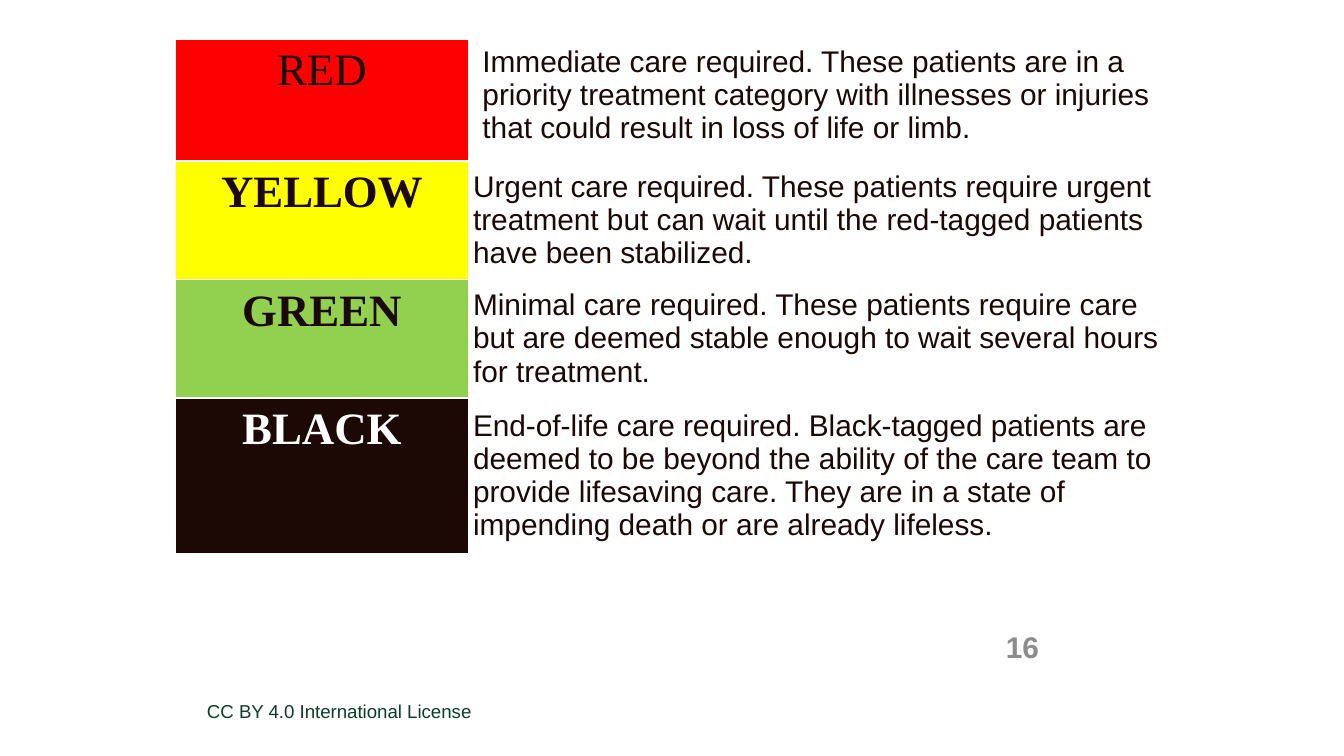
from dataclasses import dataclass

from lxml.etree import SubElement
from pptx import Presentation
from pptx.dml.color import RGBColor
from pptx.enum.text import MSO_ANCHOR, PP_ALIGN
from pptx.oxml.ns import qn
from pptx.util import Inches, Pt

WHITE, INK = "FFFFFF", "1C0804"
SERIF, SANS = "Times New Roman", "Arial"


@dataclass
class Triage:
    label: str
    care: str
    fill: str
    height: float
    color: str = INK


LEVELS = [
    Triage("RED", "Immediate care required. These patients are in a priority treatment "
           "category with illnesses or injuries that could result in loss of life or limb.",
           "FF0000", 0.91),
    Triage("YELLOW", "Urgent care required. These patients require urgent treatment but "
           "can wait until the red-tagged patients have been stabilized.",
           "FFFF00", 0.88),
    Triage("GREEN", "Minimal care required. These patients require care but are deemed "
           "stable enough to wait several hours for treatment.",
           "92D050", 0.88),
    Triage("BLACK", "End-of-life care required. Black-tagged patients are deemed to be "
           "beyond the ability of the care team to provide lifesaving care. They are in a "
           "state of impending death or are already lifeless.",
           INK, 1.16, WHITE),
]


def rgb(color: str) -> RGBColor:
    return RGBColor.from_string(color)


def write(tf, text: str, *, size: float, font: str = SANS, color: str = INK,
          bold: bool = False, align=PP_ALIGN.LEFT) -> None:
    tf.word_wrap = True
    p = tf.paragraphs[0]
    p.alignment = align
    r = p.add_run()
    r.text = text
    r.font.size, r.font.name, r.font.bold = Pt(size), font, bold
    r.font.color.rgb = rgb(color)


def add_text(s, text: str, left: float, top: float, width: float, height: float,
             anchor=MSO_ANCHOR.TOP, **fmt) -> None:
    sp = s.shapes.add_textbox(Inches(left), Inches(top), Inches(width), Inches(height))
    tf = sp.text_frame
    tf.margin_left = tf.margin_right = tf.margin_top = tf.margin_bottom = 0
    tf.vertical_anchor = anchor
    write(tf, text, **fmt)


def style_cell(cell, fill: str) -> None:
    # Borders come before the fill in the cell properties
    pr = cell._tc.get_or_add_tcPr()
    for side in "LRTB":
        ln = SubElement(pr, qn(f"a:ln{side}"), w=str(Pt(1)))
        SubElement(SubElement(ln, qn("a:solidFill")), qn("a:srgbClr"), val=WHITE)
    cell.fill.solid()
    cell.fill.fore_color.rgb = rgb(fill)


def add_triage_table(s, left: float, top: float, widths: tuple[float, float]) -> None:
    height = sum(level.height for level in LEVELS)
    table = s.shapes.add_table(len(LEVELS), 2, Inches(left), Inches(top),
                               Inches(sum(widths)), Inches(height)).table
    for column, width in zip(table.columns, widths):
        column.width = Inches(width)
    for i, level in enumerate(LEVELS):
        first = i == 0
        table.rows[i].height = Inches(level.height)
        label, care = table.cell(i, 0), table.cell(i, 1)
        style_cell(label, level.fill)
        style_cell(care, WHITE)
        if not first:
            care.vertical_anchor = MSO_ANCHOR.MIDDLE
            care.margin_left = care.margin_right = Inches(0.03)
            care.margin_top = care.margin_bottom = Inches(0.03)
        write(label.text_frame, level.label, size=24, font=SERIF, color=level.color,
              bold=not first, align=PP_ALIGN.CENTER)
        write(care.text_frame, level.care, size=16)


# Widescreen 16:9 slide
prs = Presentation()
prs.slide_width = Inches(10)
prs.slide_height = Inches(10 * 9 / 16)
s = prs.slides.add_slide(prs.slide_layouts[6])

# Triage categories
add_triage_table(s, 1.3, 0.29, (2.19, 5.21))

# Licence and page number
add_text(s, "CC BY 4.0 International License", 1.54, 5.21, 5.99, 0.15,
         size=10, color="0A3E28")
add_text(s, "16", 7.11, 4.66, 0.62, 0.3, anchor=MSO_ANCHOR.MIDDLE,
         size=16, color="8D8C8C", bold=True, align=PP_ALIGN.RIGHT)

prs.save("out.pptx")
